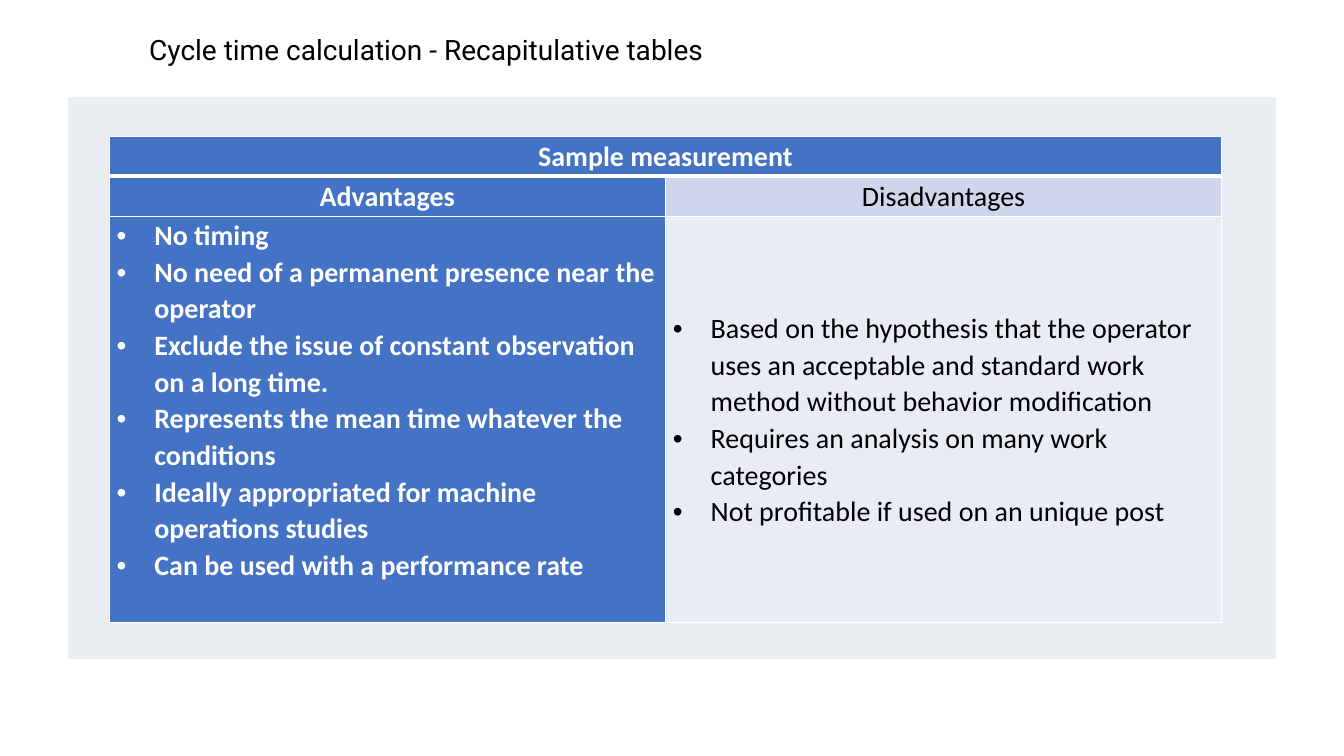
from dataclasses import dataclass

from lxml import etree
from pptx import Presentation
from pptx import util as u
from pptx.dml.color import RGBColor
from pptx.enum import shapes, text
from pptx.oxml import ns


@dataclass(frozen=True)
class Theme:
    white: str = "FFFFFF"
    black: str = "000000"
    blue: str = "4472C4"
    pale: str = "CFD5EA"
    light: str = "E9EBF5"
    panel: str = "D6DCE5"
    head: str = "Roboto"
    body: str = "Calibri"
    size: int = 20
    thin: int = 1
    thick: int = 3


@dataclass(frozen=True)
class Entry:
    row: int
    col: int
    lines: tuple[str, ...]
    fill: str
    bold: bool = True
    list: bool = False
    after: int = 0
    mid: bool = False


LOOK = Theme()

ITEMS = (
    Entry(0, 0, ("Sample measurement",), LOOK.blue, after=6),
    Entry(1, 0, ("Advantages",), LOOK.blue, after=6),
    Entry(1, 1, ("Disadvantages",), LOOK.pale, bold=False, after=6),
    Entry(2, 0, (
        "No timing",
        "No need of a permanent presence near the operator",
        "Exclude the issue of constant observation on a long time.",
        "Represents the mean time whatever the conditions",
        "Ideally appropriated for machine operations studies",
        "Can be used with a performance rate",
    ), LOOK.blue, list=True),
    Entry(2, 1, (
        "Based on the hypothesis that the operator uses an acceptable "
        "and standard work method without behavior modification",
        "Requires an analysis on many work categories",
        "Not profitable if used on an unique post",
    ), LOOK.light, bold=False, list=True, after=8, mid=True),
)


def add_run(para, words: str, font: str, color: str, bold: bool = False) -> None:
    run = para.add_run()
    run.text = words
    run.font.name = font
    run.font.size = u.Pt(LOOK.size)
    run.font.bold = bold
    run.font.color.rgb = RGBColor.from_string(color)


def add_mark(para) -> None:
    """Give a paragraph a hanging round bullet."""
    props = para._p.get_or_add_pPr()
    props.set("marL", str(u.Cm(0.95)))
    props.set("indent", str(-u.Cm(0.95)))
    font = etree.SubElement(props, ns.qn("a:buFont"))
    font.set("typeface", "Arial")
    mark = etree.SubElement(props, ns.qn("a:buChar"))
    mark.set("char", "•")


def add_edges(cell, row: int) -> None:
    """Draw white cell borders, thick between header and body."""
    props = cell._tc.get_or_add_tcPr()
    heavy = {(0, "B"), (1, "T")}
    for spot, side in enumerate("LRTB"):
        width = LOOK.thick if (row, side) in heavy else LOOK.thin
        line = etree.Element(ns.qn(f"a:ln{side}"), w=str(u.Pt(width)))
        fill = etree.SubElement(line, ns.qn("a:solidFill"))
        etree.SubElement(fill, ns.qn("a:srgbClr"), val=LOOK.white)
        props.insert(spot, line)


def fill_cell(cell, item: Entry) -> None:
    cell.fill.solid()
    cell.fill.fore_color.rgb = RGBColor.from_string(item.fill)
    cell.margin_left = cell.margin_right = u.Cm(0.19)
    cell.margin_top = cell.margin_bottom = 0
    cell.vertical_anchor = text.MSO_ANCHOR.MIDDLE if item.mid else text.MSO_ANCHOR.TOP
    color = LOOK.white if item.bold else LOOK.black
    frame = cell.text_frame
    for spot, words in enumerate(item.lines):
        para = frame.add_paragraph() if spot else frame.paragraphs[0]
        para.line_spacing = 1.07 if item.list else 1.1
        if words == item.lines[-1]:
            para.space_after = u.Pt(item.after)
        if item.list:
            add_mark(para)
        else:
            para.alignment = text.PP_ALIGN.CENTER
        add_run(para, words, LOOK.body, color, item.bold)


def add_panel(slide) -> None:
    panel = slide.shapes.add_shape(
        shapes.MSO_SHAPE.RECTANGLE, u.Cm(1.71), u.Cm(2.44), u.Cm(30.45), u.Cm(14.17))
    panel.shadow.inherit = False
    panel.line.fill.background()
    panel.fill.solid()
    panel.fill.fore_color.rgb = RGBColor.from_string(LOOK.panel)
    tint = panel._element.spPr.find(".//" + ns.qn("a:srgbClr"))
    etree.SubElement(tint, ns.qn("a:alpha"), val="50000")


def add_title(slide) -> None:
    box = slide.shapes.add_textbox(u.Cm(3.51), u.Cm(0.71), u.Cm(28.04), u.Cm(1.19))
    frame = box.text_frame
    frame.word_wrap = True
    frame.vertical_anchor = text.MSO_ANCHOR.MIDDLE
    para = frame.paragraphs[0]
    para.line_spacing = 0.9
    add_run(para, "Cycle time calculation - Recapitulative tables", LOOK.head, LOOK.black)


def add_grid(slide) -> None:
    rows = (1.01, 1.01, 10.23)
    table = slide.shapes.add_table(
        len(rows), 2, u.Cm(2.75), u.Cm(3.43), u.Cm(28.04), u.Cm(sum(rows))).table
    table.first_row = table.horz_banding = False
    for row, high in zip(table.rows, rows):
        row.height = u.Cm(high)
    table.cell(0, 0).merge(table.cell(0, 1))
    for item in ITEMS:
        fill_cell(table.cell(item.row, item.col), item)
    for row in range(len(rows)):
        for col in range(2):
            add_edges(table.cell(row, col), row)


def main() -> None:
    deck = Presentation()
    deck.slide_width, deck.slide_height = u.Cm(33.87), u.Cm(19.05)
    slide = deck.slides.add_slide(deck.slide_layouts[6])
    # Backdrop, heading, then the comparison table
    add_panel(slide)
    add_title(slide)
    add_grid(slide)
    deck.save("out.pptx")


if __name__ == "__main__":
    main()
